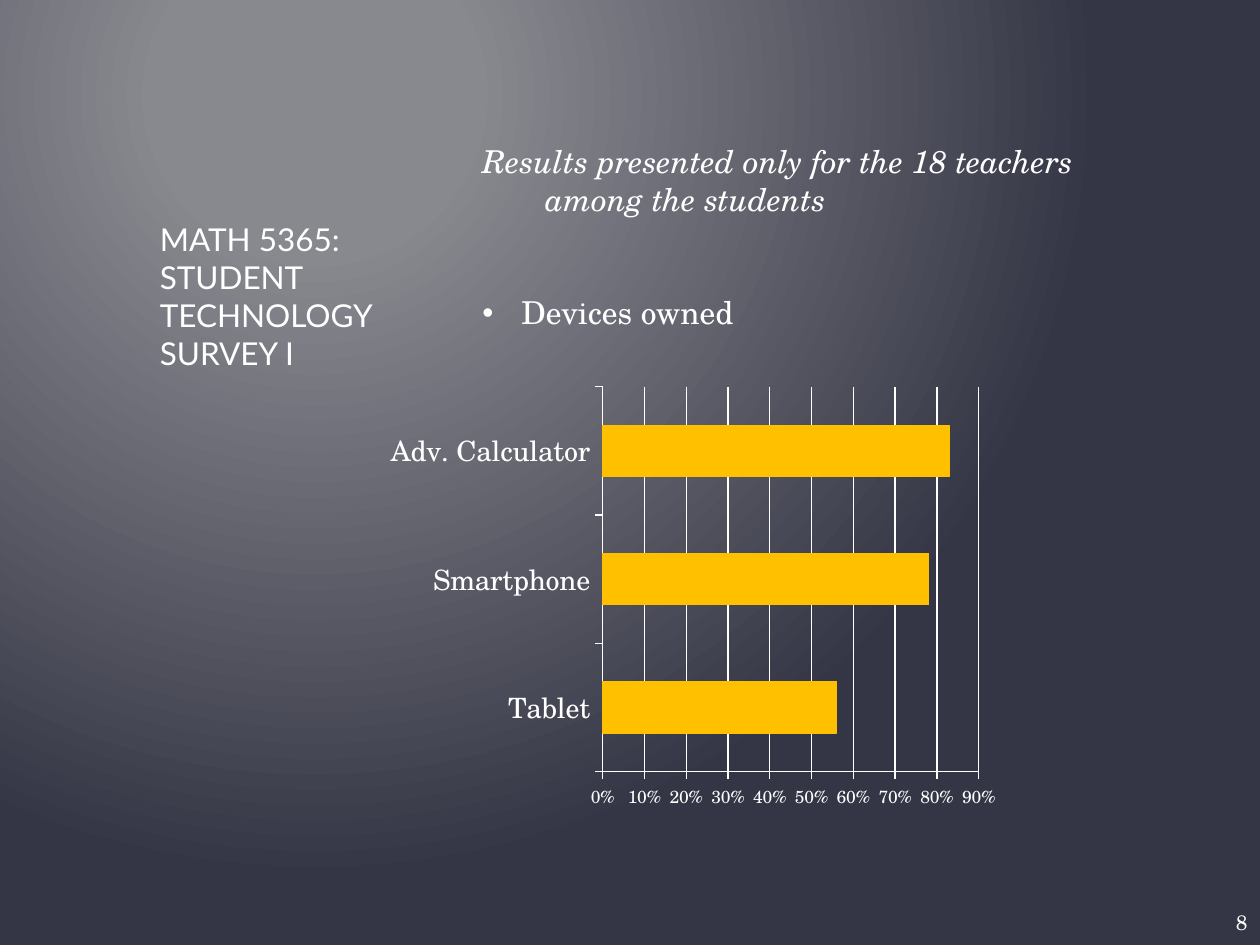
from lxml.etree import SubElement
from pptx import Presentation
from pptx.chart.data import CategoryChartData
from pptx.dml.color import RGBColor
from pptx.enum.chart import XL_CHART_TYPE as ChartType, XL_TICK_MARK as Tick
from pptx.enum.text import MSO_ANCHOR as Anchor, PP_ALIGN as Align
from pptx.oxml import parse_xml
from pptx.oxml.ns import nsdecls, qn
from pptx.util import Inches, Pt

WHITE = RGBColor(0xFF, 0xFF, 0xFF)
AMBER = RGBColor(0xFF, 0xC0, 0x00)
GREY = RGBColor(0x88, 0x89, 0x8F)
NAVY = RGBColor(0x35, 0x36, 0x45)
WIDTH, HEIGHT = Inches(10), Inches(7.5)
HEADING, BODY = "Lato", "TeX Gyre Schola"


def area(left, top, width, height):
    """Turn percentages of the slide's size into a position and size."""
    return [round(share * full / 100) for share, full in
            zip((left, top, width, height), (WIDTH, HEIGHT) * 2)]


def apply(target, formats):
    for name, value in formats.items():
        setattr(target, name, value)


def style_font(font, name, size, italic=False):
    apply(font, {"name": name, "size": Pt(size), "italic": italic})
    font.color.rgb = WHITE


def paint_background(page):
    """Fill the page with a round gradient centred towards the upper left."""
    page.background.fill.solid()
    properties = page.element.cSld.find(qn("p:bg")).find(qn("p:bgPr"))
    properties.replace(properties[0], parse_xml(
        f'<a:gradFill {nsdecls("a")} rotWithShape="1"><a:gsLst>'
        f'<a:gs pos="20000"><a:srgbClr val="{GREY}"/></a:gs>'
        f'<a:gs pos="100000"><a:srgbClr val="{NAVY}"/></a:gs></a:gsLst>'
        '<a:path path="circle"><a:fillToRect l="50000" t="20000" '
        'r="100000" b="100000"/></a:path></a:gradFill>'))


def add_text(page, place, lines, font=BODY, size=18, wrap=True):
    """Add a text box; each line is a text and a dict of its formats."""
    box = page.shapes.add_textbox(*area(*place))
    frame = box.text_frame
    apply(frame, {"word_wrap": wrap, "vertical_anchor": Anchor.TOP})
    for index, (text, formats) in enumerate(lines):
        para = frame.add_paragraph() if index else frame.paragraphs[0]
        apply(para, {"alignment": formats.get("align", Align.LEFT),
                     "space_before": Pt(formats.get("before", 0))})
        span = para.add_run()
        span.text = text
        style_font(span.font, font, size, formats.get("italic", False))
        indent_line(para, formats.get("indent", 0), formats.get("bullet"))


def indent_line(para, indent, bullet):
    """Set the left margin, with a hanging bullet if one is given."""
    properties = para._p.get_or_add_pPr()
    properties.set("marL", str(Inches(indent)))
    properties.set("indent", str(-Inches(indent) if bullet else 0))
    if bullet:
        SubElement(properties, qn("a:buFont")).set("typeface", "Arial")
        SubElement(properties, qn("a:buChar")).set("char", bullet)


def style_axis(axis, size):
    apply(axis, {"major_tick_mark": Tick.OUTSIDE, "minor_tick_mark": Tick.NONE})
    axis.format.line.color.rgb = WHITE
    style_font(axis.tick_labels.font, BODY, size)


def add_device_chart(page, place, shares):
    data = CategoryChartData(number_format="0%")
    data.categories = list(shares)
    data.add_series("Series 1", list(shares.values()))
    chart = page.shapes.add_chart(
        ChartType.BAR_STACKED, *area(*place), data).chart
    apply(chart, {"has_legend": False, "has_title": False})
    style_font(chart.font, BODY, 10)

    plot = chart.plots[0]
    apply(plot, {"gap_width": 150, "overlap": 100, "vary_by_categories": False})
    bars = plot.series[0].format
    bars.fill.solid()
    bars.fill.fore_color.rgb = AMBER
    bars.line.color.rgb = AMBER
    bars.line.width = Pt(0.75)

    style_axis(chart.category_axis, 16)
    values = chart.value_axis
    style_axis(values, 10)
    apply(values, {"minimum_scale": 0, "maximum_scale": 0.9, "major_unit": 0.1,
                   "has_major_gridlines": True})
    values.major_gridlines.format.line.color.rgb = WHITE
    apply(values.tick_labels, {"number_format": "0%",
                               "number_format_is_linked": False})


def main():
    deck = Presentation()
    apply(deck, {"slide_width": WIDTH, "slide_height": HEIGHT})
    page = deck.slides.add_slide(deck.slide_layouts[6])
    paint_background(page)
    add_text(page, (11.7, 22.67, 22.7, 28.8),
             [("MATH 5365: STUDENT TECHNOLOGY SURVEY I", {})], font=HEADING)
    add_text(page, (87.6, 95.6, 12.4, 3.33), [("8", {"align": Align.RIGHT})],
             size=12)
    add_text(page, (37.3, 14.4, 49.2, 37.73), [
        ("Results presented only for the 18 teachers", {"italic": True}),
        ("among the students", {"italic": True, "indent": 0.5}),
        ("Devices owned", {"before": 43.2, "indent": 0.31, "bullet": "•"}),
    ], wrap=False)
    add_device_chart(page, (30, 40, 50, 46.53), {
        "Tablet": 0.56, "Smartphone": 0.78, "Adv. Calculator": 0.83})
    deck.save("out.pptx")


if __name__ == "__main__":
    main()
